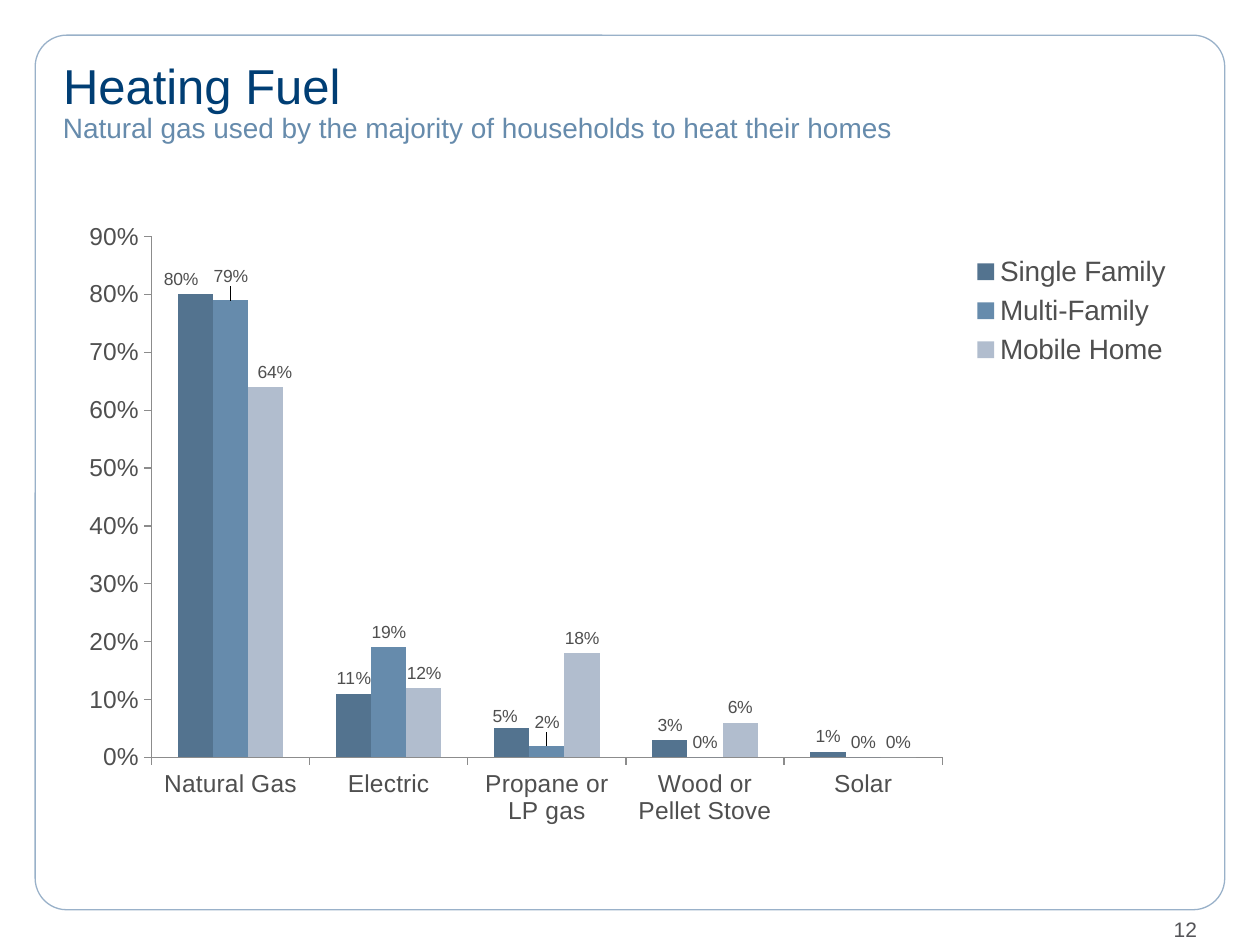
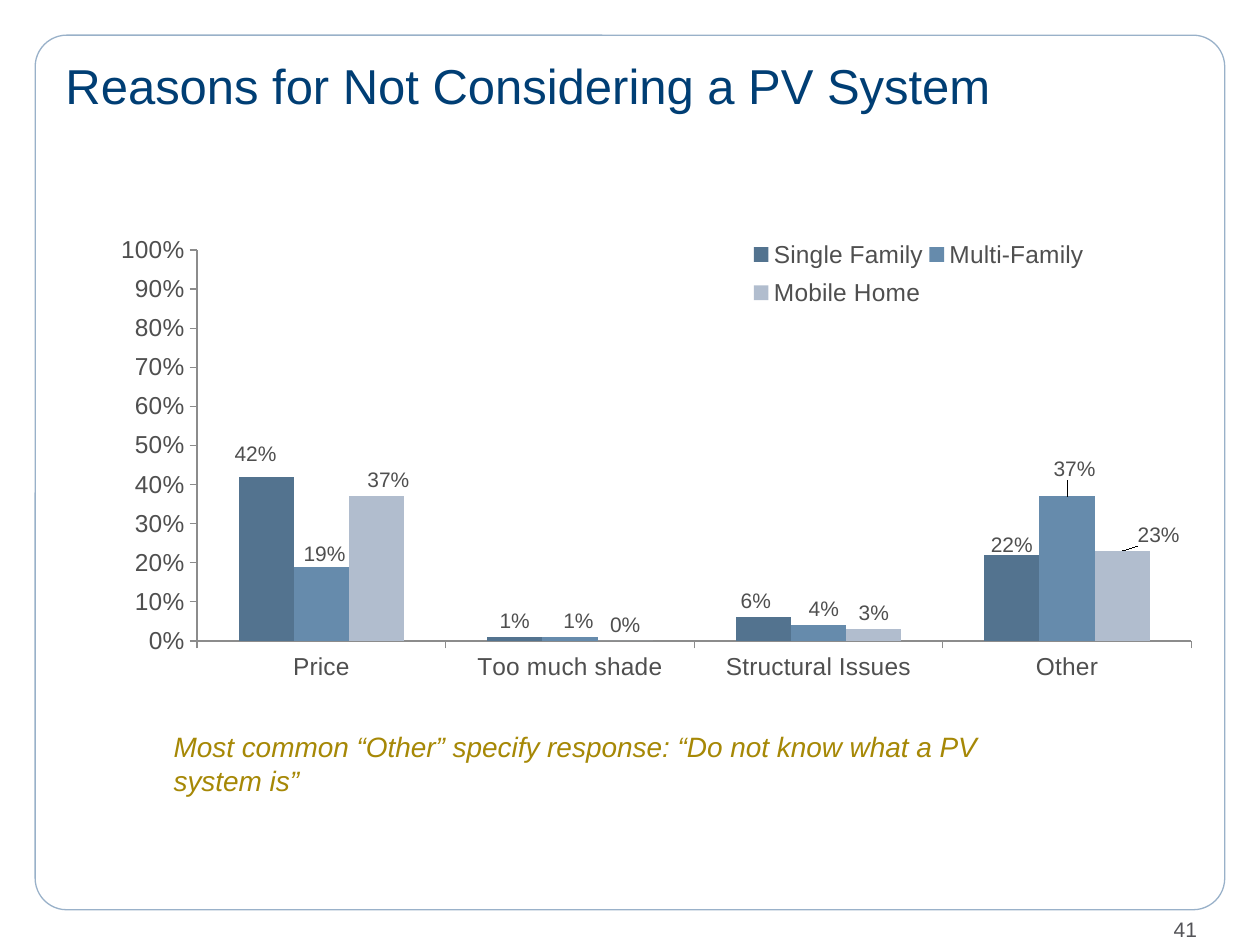
"""Build two survey slides with clustered column charts."""
from pptx import Presentation
from pptx.chart.data import CategoryChartData
from pptx.dml.color import RGBColor
from pptx.enum.chart import XL_CHART_TYPE, XL_LABEL_POSITION, XL_LEGEND_POSITION, XL_TICK_MARK
from pptx.enum.shapes import MSO_SHAPE
from pptx.enum.text import MSO_ANCHOR, PP_ALIGN
from pptx.oxml import parse_xml
from pptx.oxml.ns import nsdecls, qn
from pptx.util import Cm, Pt

COLUMNS = XL_CHART_TYPE.COLUMN_CLUSTERED
OUTSIDE_END = XL_LABEL_POSITION.OUTSIDE_END
TICK_OUTSIDE = XL_TICK_MARK.OUTSIDE
NO_TICK = XL_TICK_MARK.NONE
LEGEND_RIGHT, LEGEND_BOTTOM = XL_LEGEND_POSITION.RIGHT, XL_LEGEND_POSITION.BOTTOM
TOP, MIDDLE = MSO_ANCHOR.TOP, MSO_ANCHOR.MIDDLE
LEFT, RIGHT = PP_ALIGN.LEFT, PP_ALIGN.RIGHT
ROUNDED = MSO_SHAPE.ROUNDED_RECTANGLE

FONT = "Arial"
TITLE_COLOR, SUBTITLE_COLOR, NOTE_COLOR = "003E74", "668BAC", "A68806"
FRAME_COLOR, NUMBER_COLOR = "99B1C9", "545458"
CHART_TEXT_COLOR, AXIS_COLOR = "4F4F4F", "8C8C8C"
SERIES_COLORS = {"Single Family": "53738F", "Multi-Family": "668BAC", "Mobile Home": "B1BDCE"}

FRAME_BOX = (0.71, 0.71, 23.98, 17.63)
NUMBER_BOX = (20.57, 18.47, 3.56, 0.58)
SUBTITLE_BOX = (1.27, 2.23, 22.58, 1.37)
NOTE_BOX = (3.25, 14.58, 18.59, 1.63)

SLIDES = [
    {
        "title": "Heating Fuel",
        "title_left": 1.27,
        "subtitle": "Natural gas used by the majority of households to heat their homes",
        "number": "12",
        "chart": {
            "box": (1.37, 4.24, 22.48, 12.65),
            "categories": ["Natural Gas", "Electric", "Propane or LP gas", "Wood or Pellet Stove", "Solar"],
            "values": [(0.80, 0.11, 0.05, 0.03, 0.01), (0.79, 0.19, 0.02, 0, 0), (0.64, 0.12, 0.18, 0.06, 0)],
            "maximum": 0.9,
            "plot": (0.075, 0.042, 0.709, 0.83),
            "legend": (0.805, 0.06, 0.19, 0.2),
            "legend_position": LEGEND_RIGHT,
            "legend_size": 16,
            "label_size": 10,
            "label_shifts": {
                (0, 0): (-0.013, 0), (0, 2): (-0.006, 0.005),
                (1, 0): (0, -0.014), (1, 2): (0, -0.013), (2, 0): (0.008, 0),
            },
        },
    },
    {
        "title": "Reasons for Not Considering a PV System",
        "title_left": 1.32,
        "note": "Most common “Other” specify response: “Do not know what a PV system is”",
        "number": "41",
        "chart": {
            "box": (2.44, 3.51, 21.59, 12.55),
            "categories": ["Price", "Too much shade", "Structural Issues", "Other"],
            "values": [(0.42, 0.01, 0.06, 0.22), (0.19, 0.01, 0.04, 0.37), (0.37, 0, 0.03, 0.23)],
            "maximum": 1,
            "plot": (0.07, 0.122, 0.93, 0.628),
            "legend": (0.585, 0.09, 0.32, 0.14),
            "legend_position": LEGEND_BOTTOM,
            "legend_size": 14,
            "label_size": 12,
            "label_shifts": {
                (0, 0): (-0.01, -0.01), (0, 2): (-0.007, 0), (0, 3): (0, 0.01),
                (1, 0): (0.003, 0.006), (1, 1): (0.008, 0), (1, 2): (0.005, 0), (1, 3): (0.007, -0.017),
                (2, 0): (0.011, 0), (2, 3): (0.034, 0),
            },
        },
    },
]


def color(value):
    return RGBColor.from_string(value)


def style_font(font, size, hex_color, italic=False):
    font.name, font.size, font.italic = FONT, Pt(size), italic
    font.color.rgb = color(hex_color)


def write_text(shape, text, size, hex_color, alignment=LEFT, anchor=TOP, italic=False, inset=(0, 0)):
    frame = shape.text_frame
    frame.word_wrap = True
    frame.vertical_anchor = anchor
    frame.margin_left = frame.margin_right = Cm(inset[0])
    frame.margin_top = frame.margin_bottom = Cm(inset[1])
    paragraph = frame.paragraphs[0]
    paragraph.alignment = alignment
    run = paragraph.add_run()
    run.text = text
    style_font(run.font, size, hex_color, italic)


def add_text(slide, box, text, size, hex_color, **options):
    write_text(slide.shapes.add_textbox(*map(Cm, box)), text, size, hex_color, **options)


def set_layout(parent, index, numbers, target="", mode=""):
    for old_layout in parent.findall(qn("c:layout")):
        parent.remove(old_layout)
    parts = f'<c:layoutTarget val="{target}"/>' if target else ""
    if mode:
        parts += f'<c:xMode val="{mode}"/><c:yMode val="{mode}"/>'
    parts += "".join(f'<c:{name} val="{number}"/>' for name, number in zip("xywh", numbers))
    layout = f'<c:layout {nsdecls("c")}><c:manualLayout>{parts}</c:manualLayout></c:layout>'
    parent.insert(index, parse_xml(layout))


def style_axes(chart, maximum):
    for axis in (chart.category_axis, chart.value_axis):
        axis.has_major_gridlines = False
        axis.major_tick_mark, axis.minor_tick_mark = TICK_OUTSIDE, NO_TICK
        axis.format.line.color.rgb = color(AXIS_COLOR)
        axis.format.line.width = Pt(0.75)
        style_font(axis.tick_labels.font, 14, CHART_TEXT_COLOR)
    chart.value_axis.minimum_scale, chart.value_axis.maximum_scale = 0, maximum
    chart.value_axis.major_unit = 0.1
    chart.value_axis.tick_labels.number_format = "0%"
    chart.value_axis.tick_labels.number_format_is_linked = False


def style_series(series, label_size):
    series.format.fill.solid()
    series.format.fill.fore_color.rgb = color(SERIES_COLORS[series.name])
    labels = series.data_labels
    labels.show_value = True
    labels.number_format, labels.number_format_is_linked = "0%", False
    labels.position = OUTSIDE_END
    style_font(labels.font, label_size, CHART_TEXT_COLOR)


def shift_labels(chart, plot, shifts, size):
    for (row, point), shift in shifts.items():
        label = plot.series[row].points[point].data_label
        label.position = OUTSIDE_END
        style_font(label.font, size, CHART_TEXT_COLOR)
        query = f".//c:ser[c:idx/@val='{row}']/c:dLbls/c:dLbl[c:idx/@val='{point}']"
        set_layout(chart.element.xpath(query)[0], 1, shift)


def add_column_chart(slide, content):
    data = CategoryChartData(number_format="0%")
    data.categories = content["categories"]
    for name, values in zip(SERIES_COLORS, content["values"]):
        data.add_series(name, values)
    chart = slide.shapes.add_chart(COLUMNS, *map(Cm, content["box"]), data).chart
    chart.has_title = False
    style_font(chart.font, 18, CHART_TEXT_COLOR)
    style_axes(chart, content["maximum"])

    plot = chart.plots[0]
    plot.vary_by_categories = False
    plot.gap_width, plot.overlap = 150, 0
    for series in plot.series:
        style_series(series, content["label_size"])
    shift_labels(chart, plot, content["label_shifts"], content["label_size"])

    chart.has_legend = True
    chart.legend.position = content["legend_position"]
    chart.legend.include_in_layout = False
    style_font(chart.legend.font, content["legend_size"], CHART_TEXT_COLOR)
    set_layout(chart.element.xpath(".//c:plotArea")[0], 0, content["plot"], "inner", "edge")
    set_layout(chart.element.xpath(".//c:legend")[0], 1, content["legend"], mode="edge")


def add_frame(slide):
    frame = slide.shapes.add_shape(ROUNDED, *map(Cm, FRAME_BOX))
    frame.adjustments[0] = 0.036
    frame.shadow.inherit = False
    frame.fill.background()
    frame.line.color.rgb = color(FRAME_COLOR)
    frame.line.width = Pt(0.75)


def add_slide(presentation, content):
    slide = presentation.slides.add_slide(presentation.slide_layouts[5])
    add_frame(slide)
    add_text(slide, NUMBER_BOX, content["number"], 12, NUMBER_COLOR, alignment=RIGHT)
    title = slide.shapes.title
    title.left, title.top = Cm(content["title_left"]), Cm(1.02)
    title.width, title.height = Cm(22.5), Cm(1.4)
    write_text(title, content["title"], 28, TITLE_COLOR, anchor=MIDDLE)
    if "subtitle" in content:
        add_text(slide, SUBTITLE_BOX, content["subtitle"], 16, SUBTITLE_COLOR)
    add_column_chart(slide, content["chart"])
    if "note" in content:
        add_text(slide, NOTE_BOX, content["note"], 16, NOTE_COLOR, italic=True, inset=(0.25, 0.13))


def main():
    presentation = Presentation()
    presentation.slide_width, presentation.slide_height = Cm(25.4), Cm(19.05)
    for content in SLIDES:
        add_slide(presentation, content)
    presentation.save("out.pptx")


if __name__ == "__main__":
    main()
